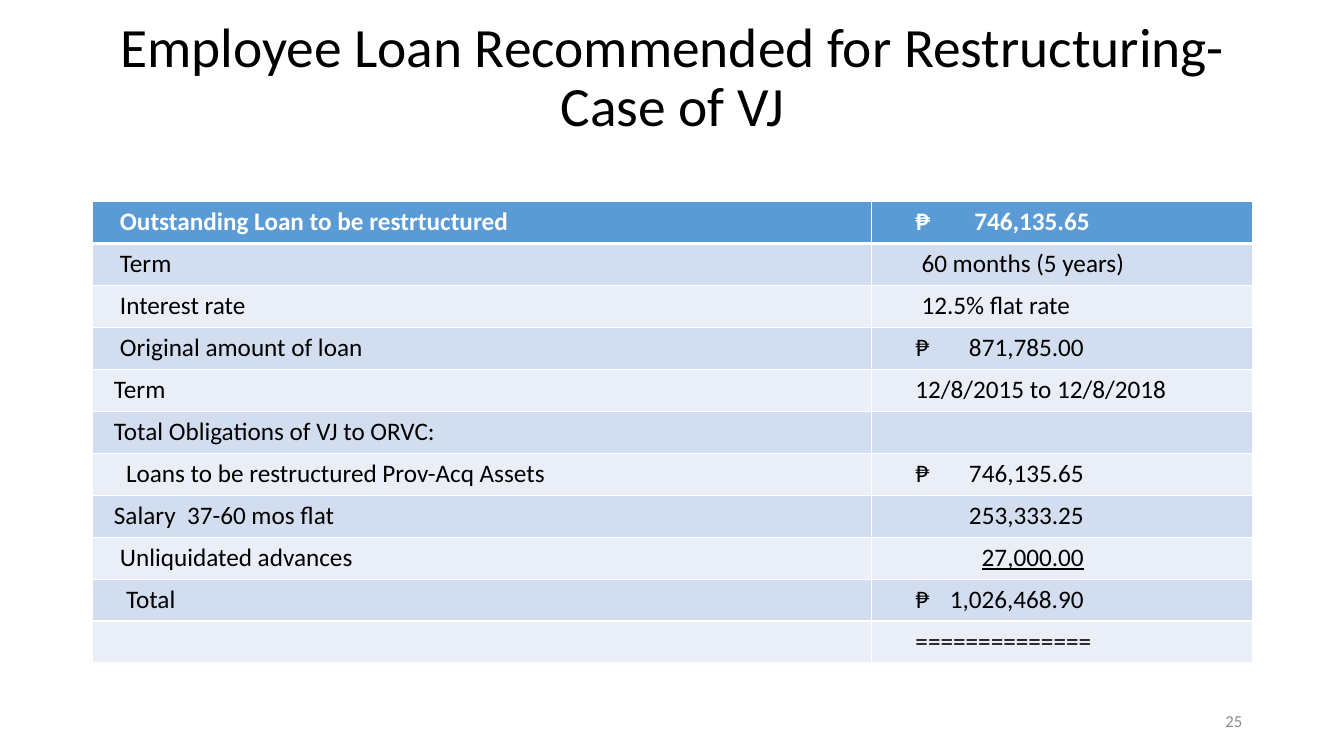
from dataclasses import dataclass

from lxml.etree import SubElement
from pptx import Presentation
from pptx.dml.color import RGBColor
from pptx.enum.text import MSO_ANCHOR, PP_ALIGN
from pptx.oxml.ns import qn
from pptx.util import Inches, Pt


@dataclass(frozen=True)
class Theme:
    font: str = "Calibri"
    title_size: float = 39.6
    body_size: float = 18
    number_size: float = 12
    black: str = "000000"
    white: str = "FFFFFF"
    grey: str = "8C8C8C"
    header_fill: str = "5B9BD5"
    band_fills: tuple[str, str] = ("EAEFF7", "D2DEEF")
    border: float = 1
    header_border: float = 3


@dataclass(frozen=True)
class LoanRow:
    label: str
    value: str
    label_inset: float = 0.27
    value_inset: float = 0.44
    underline: bool = False


THEME = Theme()
TABLE_HEIGHT = 4.58
AMOUNT_EDGE = 2.11
HEADER_AMOUNT_EDGE = 2.17

# A tab in a value pushes the amount to the shared right-hand edge.
LOAN_ROWS = [
    LoanRow("Outstanding Loan to be restrtuctured", "₱\t746,135.65"),
    LoanRow("Term", "60 months (5 years)", value_inset=0.5),
    LoanRow("Interest rate", "12.5% flat rate", value_inset=0.5),
    LoanRow("Original amount of loan", "₱\t871,785.00"),
    LoanRow("Term", "12/8/2015 to 12/8/2018", label_inset=0.21),
    LoanRow("Total Obligations of VJ to ORVC:", "", label_inset=0.21),
    LoanRow("Loans to be restructured Prov-Acq Assets", "₱\t746,135.65", label_inset=0.33),
    LoanRow("Salary  37-60 mos flat", "\t253,333.25", label_inset=0.21),
    LoanRow("Unliquidated advances", "\t27,000.00", value_inset=0.38, underline=True),
    LoanRow("Total", "₱\t1,026,468.90", label_inset=0.33),
    LoanRow("", "=============="),
]


def write_text(frame, text: str, *, size: float, color: str, bold: bool = False,
               underline: bool = False, align=PP_ALIGN.LEFT):
    para = frame.paragraphs[0]
    para.alignment = align
    if text:
        span = para.add_run()
        span.text = text
        span.font.name = THEME.font
        span.font.size = Pt(size)
        span.font.color.rgb = RGBColor.from_string(color)
        span.font.bold = bold
        span.font.underline = underline
    return para


def add_text_box(page, left: float, top: float, width: float, height: float,
                 text: str, **text_format):
    box = page.shapes.add_textbox(Inches(left), Inches(top), Inches(width), Inches(height))
    box.text_frame.word_wrap = True
    box.text_frame.vertical_anchor = MSO_ANCHOR.MIDDLE
    para = write_text(box.text_frame, text, **text_format)
    return box, para


def add_right_tab(para, position: float) -> None:
    tabs = SubElement(para._p.get_or_add_pPr(), qn("a:tabLst"))
    SubElement(tabs, qn("a:tab"), pos=str(Inches(position)), algn="r")


def add_borders(cell, widths: dict[str, float]) -> None:
    """Draw white borders; must run before the cell is filled."""
    properties = cell._tc.get_or_add_tcPr()
    for side in ("L", "R", "T", "B"):
        line = SubElement(properties, qn(f"a:ln{side}"), w=str(Pt(widths[side])))
        fill = SubElement(line, qn("a:solidFill"))
        SubElement(fill, qn("a:srgbClr"), val=THEME.white)


def fill_cell(cell, text: str, inset: float, row_index: int, underline: bool = False) -> None:
    is_header = row_index == 0
    widths = dict.fromkeys("LRTB", THEME.border)
    if is_header:
        widths["B"] = THEME.header_border
    elif row_index == 1:
        widths["T"] = THEME.header_border
    add_borders(cell, widths)
    cell.fill.solid()
    color = THEME.header_fill if is_header else THEME.band_fills[row_index % 2]
    cell.fill.fore_color.rgb = RGBColor.from_string(color)
    cell.margin_left = Inches(inset)
    para = write_text(cell.text_frame, text, size=THEME.body_size, bold=is_header,
                      color=THEME.white if is_header else THEME.black, underline=underline)
    if "\t" in text:
        edge = HEADER_AMOUNT_EDGE if is_header else AMOUNT_EDGE
        add_right_tab(para, edge - inset)


def add_loan_table(page, rows: list[LoanRow]) -> None:
    table = page.shapes.add_table(len(rows), 2, Inches(0.92), Inches(2),
                                  Inches(11.5), Inches(TABLE_HEIGHT)).table
    for column, width in zip(table.columns, (7.72, 3.78)):
        column.width = Inches(width)
    for index, row in enumerate(rows):
        table.rows[index].height = Inches(TABLE_HEIGHT / len(rows))
        fill_cell(table.cell(index, 0), row.label, row.label_inset, index)
        fill_cell(table.cell(index, 1), row.value, row.value_inset, index, row.underline)


def main() -> None:
    deck = Presentation()
    deck.slide_width, deck.slide_height = Inches(13.33), Inches(7.5)
    page = deck.slides.add_slide(deck.slide_layouts[6])

    title, para = add_text_box(page, 0.92, 0.4, 11.5, 1.45,
                               "Employee Loan Recommended for Restructuring-Case of VJ",
                               size=THEME.title_size, color=THEME.black, align=PP_ALIGN.CENTER)
    para.line_spacing = 0.9
    title.text_frame.margin_bottom = Inches(0.73)

    add_loan_table(page, LOAN_ROWS)
    add_text_box(page, 9.42, 6.95, 3, 0.4, "25", size=THEME.number_size,
                 color=THEME.grey, align=PP_ALIGN.RIGHT)
    deck.save("out.pptx")


if __name__ == "__main__":
    main()
